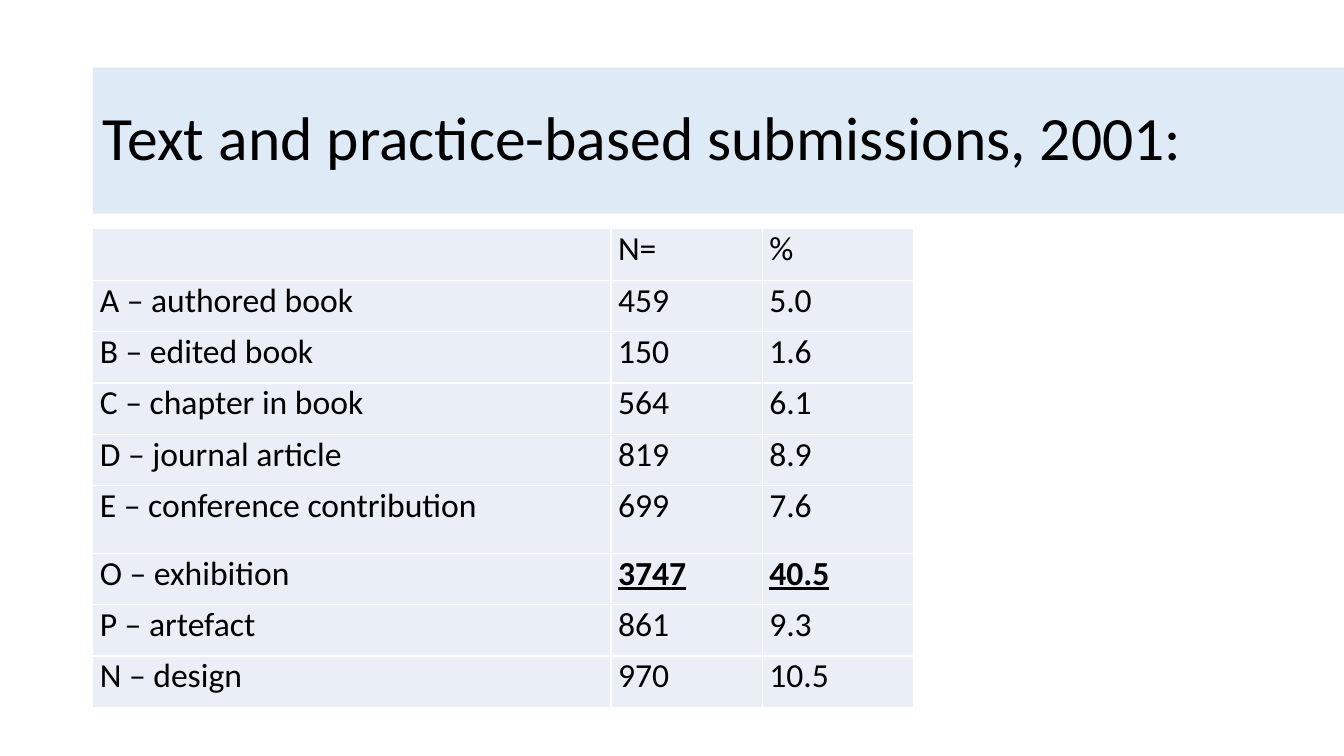
from lxml.etree import SubElement
from pptx import Presentation
from pptx.dml.color import RGBColor
from pptx.enum.text import MSO_ANCHOR, PP_ALIGN
from pptx.oxml.ns import qn
from pptx.util import Inches, Pt

COLORS = {"title_fill": "DEEBF7", "cell_fill": "EAEFF7", "border": "FFFFFF", "text": "000000"}
ROWS = [
    ("", "N=", "%"),
    ("A – authored book", "459", "5.0"),
    ("B – edited book", "150", "1.6"),
    ("C – chapter in book", "564", "6.1"),
    ("D – journal article", "819", "8.9"),
    ("E – conference contribution", "699", "7.6"),
    ("O – exhibition", "3747", "40.5"),
    ("P – artefact", "861", "9.3"),
    ("N – design", "970", "10.5"),
]
COLUMN_WIDTHS = (5.14, 1.5, 1.5)
ROW_HEIGHT = 0.51
TALL_ROW, TALL_HEIGHT = 5, 0.67
EMPHASIZED = ("3747", "40.5")
LEFT = Inches(0.92)


def style_font(paragraph, size):
    paragraph.font.name = "Calibri"
    paragraph.font.size = Pt(size)
    paragraph.font.color.rgb = RGBColor.from_string(COLORS["text"])


def add_borders(cell):
    properties = cell._tc.get_or_add_tcPr()
    for side in ("a:lnL", "a:lnR", "a:lnT", "a:lnB"):
        line = SubElement(properties, qn(side), w=str(Pt(1)))
        fill = SubElement(line, qn("a:solidFill"))
        SubElement(fill, qn("a:srgbClr"), val=COLORS["border"])


presentation = Presentation()
presentation.slide_width = Inches(13.33)
presentation.slide_height = Inches(7.5)
slide = presentation.slides.add_slide(presentation.slide_layouts[5])

# Title band
title = slide.shapes.title
title.left, title.top = LEFT, Inches(0.67)
title.width, title.height = Inches(12.42), Inches(1.45)
title.fill.solid()
title.fill.fore_color.rgb = RGBColor.from_string(COLORS["title_fill"])
title.text_frame.text = "Text and practice-based submissions, 2001:"
title.text_frame.vertical_anchor = MSO_ANCHOR.MIDDLE
heading = title.text_frame.paragraphs[0]
heading.alignment = PP_ALIGN.LEFT
heading.line_spacing = 0.9
style_font(heading, 44)

# Submissions table
table = slide.shapes.add_table(
    len(ROWS), len(COLUMN_WIDTHS), LEFT, Inches(2.27),
    Inches(sum(COLUMN_WIDTHS)), Inches(ROW_HEIGHT * len(ROWS)),
).table
table.first_row = False
table.horz_banding = False
for column, width in zip(table.columns, COLUMN_WIDTHS):
    column.width = Inches(width)
for row_index, (row, values) in enumerate(zip(table.rows, ROWS)):
    row.height = Inches(TALL_HEIGHT if row_index == TALL_ROW else ROW_HEIGHT)
    for cell, value in zip(row.cells, values):
        cell.margin_left = cell.margin_right = Inches(0.07)
        cell.margin_top = cell.margin_bottom = 0
        add_borders(cell)
        cell.fill.solid()
        cell.fill.fore_color.rgb = RGBColor.from_string(COLORS["cell_fill"])
        cell.text = value
        paragraph = cell.text_frame.paragraphs[0]
        style_font(paragraph, 24)
        if value in EMPHASIZED:
            paragraph.font.bold = True
            paragraph.font.underline = True

presentation.save("out.pptx")
